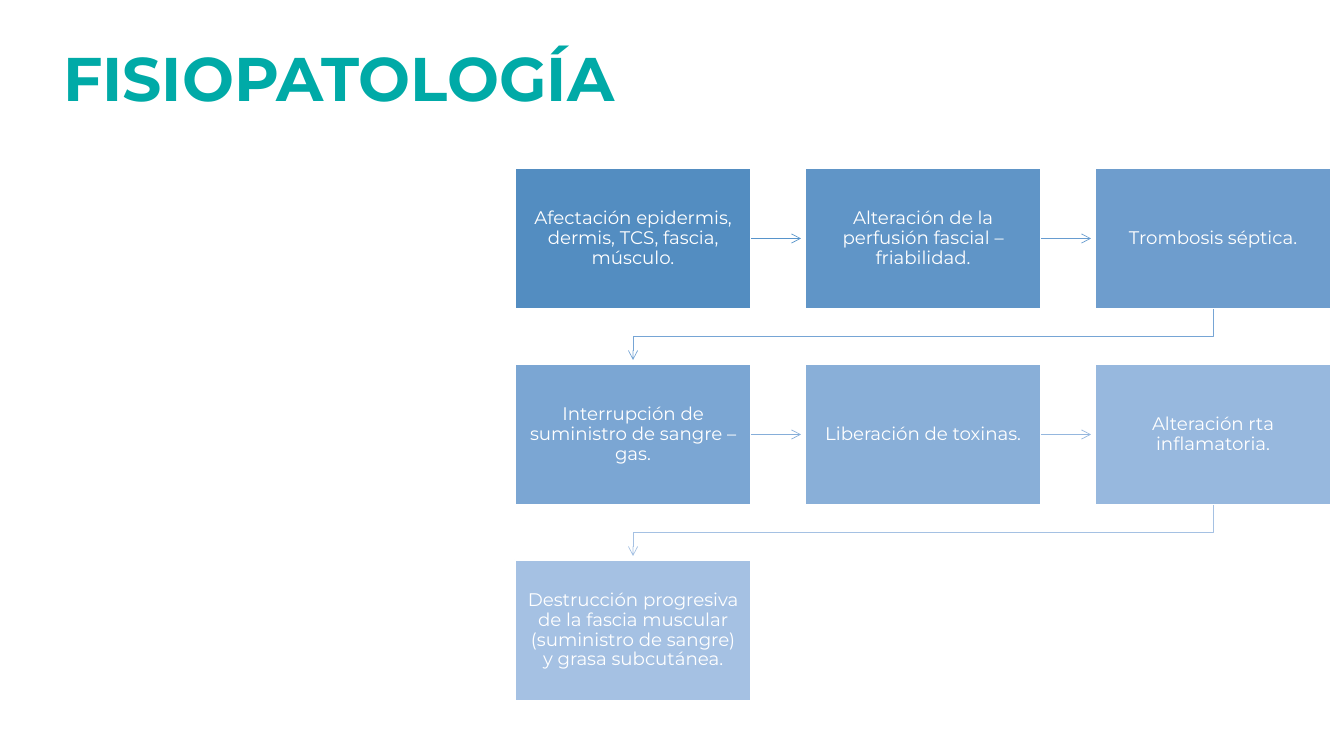
from lxml.etree import SubElement
from pptx import Presentation
from pptx.dml.color import RGBColor
from pptx.enum.shapes import MSO_CONNECTOR, MSO_SHAPE
from pptx.enum.text import MSO_ANCHOR, PP_ALIGN
from pptx.oxml.ns import qn
from pptx.util import Pt

SCALE = 914400 / 100.8
COLORS = {"title": "00AAA7", "white": "FFFFFF"}
FONT = "Montserrat"
COLUMNS = 3
LEFT, TOP = 515, 168
WIDTH, HEIGHT = 236, 141
PITCH_X, PITCH_Y = 290, 196
ARROW_GAP = 4
STEPS = [
    ("Afectación epidermis, dermis, TCS, fascia, músculo.", "538DC1", "5794CB"),
    ("Alteración de la perfusión fascial – friabilidad.", "6095C7", "679CD0"),
    ("Trombosis séptica.", "6E9DCD", "76A5D5"),
    ("Interrupción de suministro de sangre – gas.", "7BA6D3", "86AED9"),
    ("Liberación de toxinas.", "89AFD8", "95B7DE"),
    ("Alteración rta inflamatoria.", "97B8DE", "A5C1E3"),
    ("Destrucción progresiva de la fascia muscular (suministro de sangre) "
     "y grasa subcutánea.", "A5C1E3", None),
]


def px(value):
    """Turn pixels into EMU."""
    return round(value * SCALE)


def write_text(shape, text, size, color, bold=False, align=PP_ALIGN.LEFT):
    """Write one vertically centred paragraph into a shape."""
    frame = shape.text_frame
    frame.word_wrap = True
    frame.vertical_anchor = MSO_ANCHOR.MIDDLE
    frame.margin_left = frame.margin_right = px(10)
    frame.margin_top = frame.margin_bottom = px(10)
    para = frame.paragraphs[0]
    para.alignment = align
    para.line_spacing = 0.9
    span = para.add_run()
    span.text = text
    span.font.name = FONT
    span.font.size = Pt(size)
    span.font.bold = bold
    span.font.color.rgb = RGBColor.from_string(color)


def add_step(page, left, top, text, fill):
    """Add one step box of the flow."""
    box = page.shapes.add_shape(MSO_SHAPE.RECTANGLE, px(left), px(top), px(WIDTH), px(HEIGHT))
    box.shadow.inherit = False
    box.fill.solid()
    box.fill.fore_color.rgb = RGBColor.from_string(fill)
    box.line.color.rgb = RGBColor.from_string(COLORS["white"])
    box.line.width = Pt(1)
    write_text(box, text, 13, COLORS["white"], align=PP_ALIGN.CENTER)
    return box


def style_arrow(arrow, color):
    """Give a line its colour, width and open arrowhead."""
    arrow.line.color.rgb = RGBColor.from_string(color)
    arrow.line.width = Pt(0.5)
    SubElement(arrow.line._get_or_add_ln(), qn("a:tailEnd"), type="arrow")


def add_straight_arrow(page, box, left, top, color):
    """Lead from a box to the next one in its row."""
    middle = px(top + HEIGHT / 2)
    arrow = page.shapes.add_connector(
        MSO_CONNECTOR.STRAIGHT, px(left + WIDTH), middle, px(left + PITCH_X - ARROW_GAP), middle)
    arrow.begin_connect(box, 3)
    style_arrow(arrow, color)
    SubElement(arrow._element.spPr, qn("a:effectLst"))


def add_return_arrow(page, left, top, color):
    """Lead from the last box of a row to the first box of the next row."""
    start_x, end_x = left + WIDTH // 2, LEFT + WIDTH // 2
    start_y, end_y = top + HEIGHT, top + PITCH_Y - ARROW_GAP
    turn_y = (top + HEIGHT + top + PITCH_Y) // 2
    builder = page.shapes.build_freeform(start_x, start_y, scale=SCALE)
    builder.add_line_segments([(start_x, turn_y), (end_x, turn_y), (end_x, end_y)], close=False)
    arrow = builder.convert_to_shape()
    arrow.shadow.inherit = False
    arrow.fill.background()
    style_arrow(arrow, color)


def main():
    """Build the slide and save it."""
    deck = Presentation()
    deck.slide_width, deck.slide_height = px(1344), px(756)
    page = deck.slides.add_slide(deck.slide_layouts[6])
    title = page.shapes.add_textbox(px(53), px(9), px(1159), px(146))
    write_text(title, "FISIOPATOLOGÍA", 44, COLORS["title"], bold=True)
    for index, (text, fill, arrow_color) in enumerate(STEPS):
        row, column = divmod(index, COLUMNS)
        left, top = LEFT + column * PITCH_X, TOP + row * PITCH_Y
        box = add_step(page, left, top, text, fill)
        if arrow_color is None:
            continue
        if column < COLUMNS - 1:
            add_straight_arrow(page, box, left, top, arrow_color)
        else:
            add_return_arrow(page, left, top, arrow_color)
    deck.save("out.pptx")


if __name__ == "__main__":
    main()
